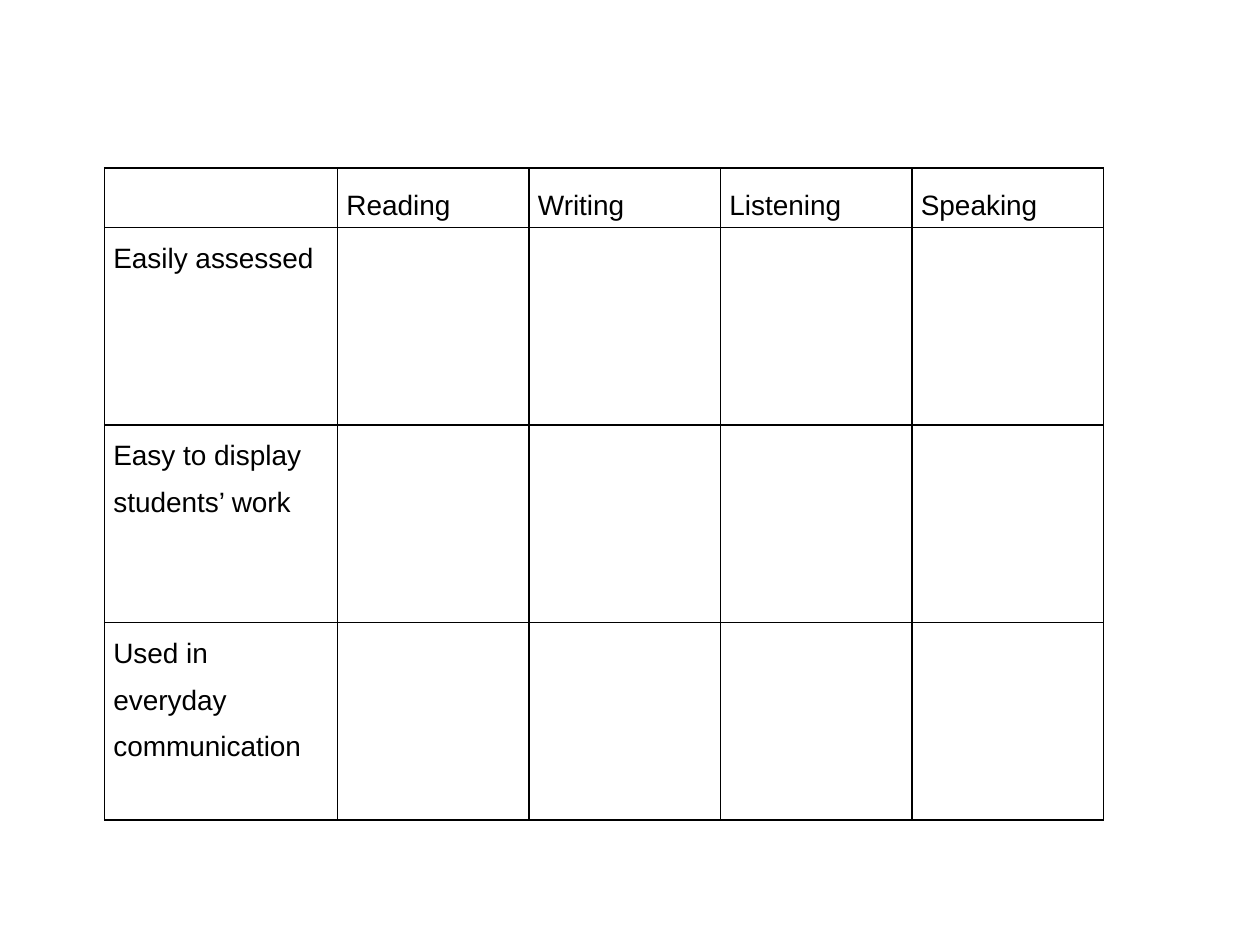
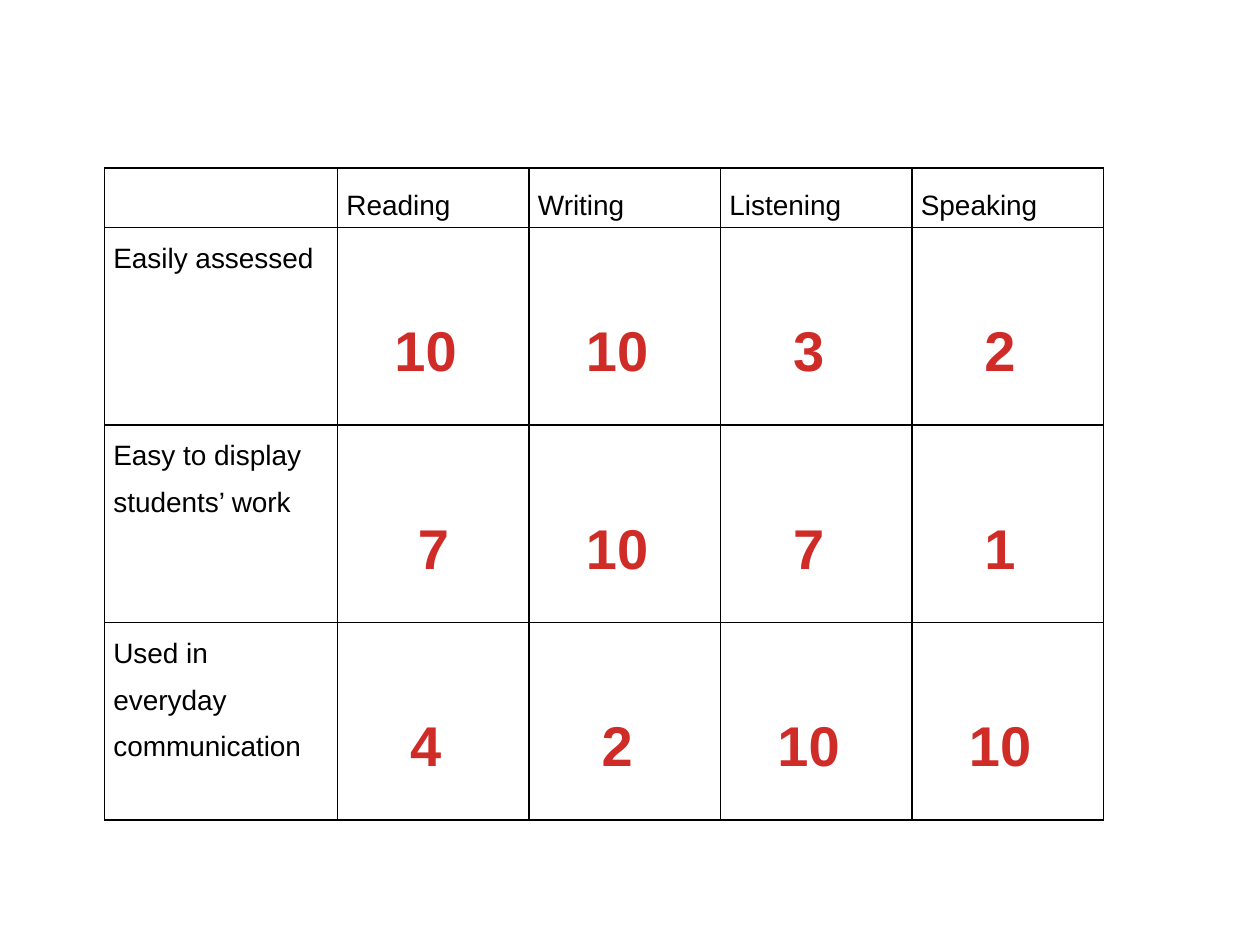
"""Build two slides that rate the four language skills in a table."""
from lxml.etree import SubElement
from pptx import Presentation
from pptx.dml.color import RGBColor
from pptx.enum.text import MSO_ANCHOR as Anchor, PP_ALIGN as Align
from pptx.oxml.ns import qn
from pptx.util import Inches, Pt

SKILLS = ["Reading", "Writing", "Listening", "Speaking"]
CRITERIA = ["Easily assessed", "Easy to display students’ work", "Used in everyday communication"]
SCORES = [["10 ", "10 ", "3 ", "2 "], ["7", "10 ", "7 ", "1 "], ["4 ", "2 ", "10 ", "10 "]]
BLACK, RED = "000000", "CF2C28"


def color(value):
    return RGBColor.from_string(value)


class Deck:
    font = "Arial"
    line_spacing = 1.5
    side_margin = Inches(0.07)
    score_offset = Inches(0.49)
    label_share, skill_share = 0.185, 0.152
    header_share, body_share = 0.063, 0.209

    def __init__(self):
        self.presentation = Presentation()
        self.presentation.slide_width = Inches(10)
        self.presentation.slide_height = Inches(7.5)
        self.slide = None

    def add_slide(self):
        self.slide = self.presentation.slides.add_slide(self.presentation.slide_layouts[6])

    def across(self, share):
        return int(self.presentation.slide_width * share)

    def down(self, share):
        return int(self.presentation.slide_height * share)

    def border(self, cell):
        properties = cell._tc.get_or_add_tcPr()
        for position, side in enumerate(("a:lnL", "a:lnR", "a:lnT", "a:lnB")):
            line = SubElement(properties, qn(side), w=str(Pt(1)))
            properties.insert(position, line)
            fill = SubElement(line, qn("a:solidFill"))
            SubElement(fill, qn("a:srgbClr"), val=BLACK)

    def label(self, cell, text, align=Align.LEFT, size=16, ink=BLACK, bold=False):
        cell.margin_left = cell.margin_right = self.side_margin
        cell.margin_top = cell.margin_bottom = 0
        paragraph = cell.text_frame.paragraphs[0]
        paragraph.alignment = align
        paragraph.line_spacing = self.line_spacing
        run = paragraph.add_run()
        run.text = text
        run.font.name = self.font
        run.font.size = Pt(size)
        run.font.bold = bold
        run.font.color.rgb = color(ink)

    def score(self, cell, text):
        self.label(cell, text, Align.CENTER, 32, RED, True)
        cell.margin_top = self.score_offset

    def rating_table(self, scores=()):
        widths = [self.label_share] + [self.skill_share] * len(SKILLS)
        heights = [self.header_share] + [self.body_share] * len(CRITERIA)
        table = self.slide.shapes.add_table(
            len(heights), len(widths), self.across(0.083), self.down(0.178),
            self.across(sum(widths)), self.down(sum(heights))).table
        table.first_row = table.horz_banding = False
        for column, share in zip(table.columns, widths):
            column.width = self.across(share)
        for row, share in zip(table.rows, heights):
            row.height = self.down(share)
        for cell in table.iter_cells():
            cell.fill.background()
            self.border(cell)
        for column, skill in enumerate(SKILLS, 1):
            self.label(table.cell(0, column), skill, Align.JUSTIFY)
            table.cell(0, column).vertical_anchor = Anchor.MIDDLE
        for row, criterion in enumerate(CRITERIA, 1):
            self.label(table.cell(row, 0), criterion)
        for row, values in enumerate(scores, 1):
            for column, value in enumerate(values, 1):
                self.score(table.cell(row, column), value)


def main():
    deck = Deck()
    for scores in ((), SCORES):
        deck.add_slide()
        deck.rating_table(scores)
    deck.presentation.save("out.pptx")


if __name__ == "__main__":
    main()
